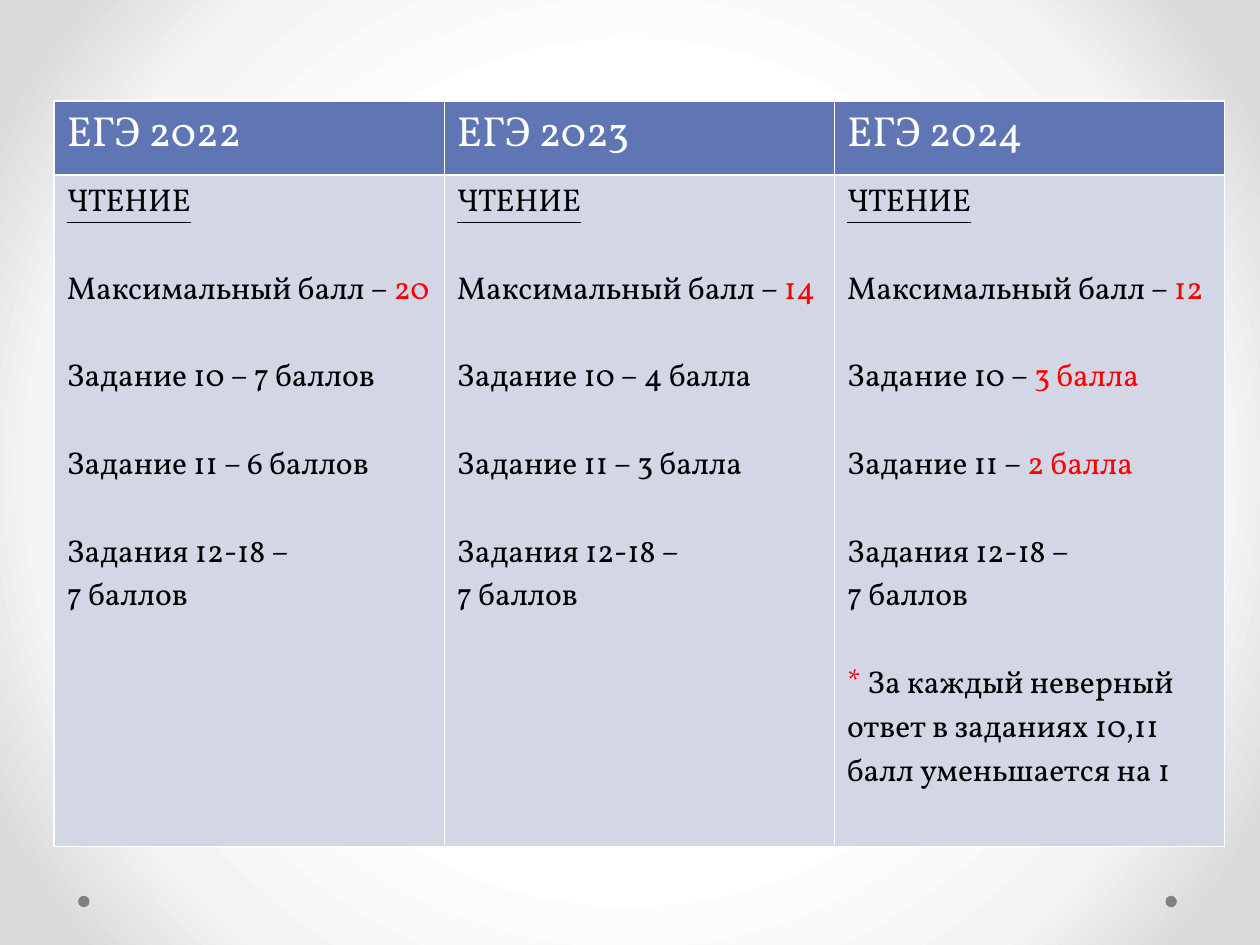
from pptx import Presentation
from pptx.dml.color import RGBColor
from pptx.enum.shapes import MSO_SHAPE
from pptx.oxml import parse_xml
from pptx.oxml.ns import nsdecls, qn
from pptx.util import Inches, Pt

OVAL = MSO_SHAPE.OVAL
WIDE, HIGH = 10, 7.5
HEX = {"white": "FFFFFF", "pale": "F4F4F4", "edge": "DADADA", "dot": "808080",
       "head": "6076B4", "body": "D2D6E5", "black": "000000", "red": "FF0000"}
STOPS = [(50, "white"), (76, "pale"), (92, "edge")]
ROWS = [0.59, 5.33]
GAP = 25
TAIL = "7 баллов"
EXAMS = [
    ("ЕГЭ 2022", "20", "7 баллов", "6 баллов", []),
    ("ЕГЭ 2023", "14", "4 балла", "3 балла", []),
    ("ЕГЭ 2024", "12", "|3 балла", "|2 балла",
     ["|* |За каждый неверный ответ в заданиях 10,11 балл уменьшается на 1"]),
]


def tint(name):
    """Return the named colour."""
    return RGBColor.from_string(HEX[name])


def paint(slide):
    """Fill the background with a round gradient."""
    slide.background.fill.gradient()
    grad = slide.element.find(".//" + qn("a:gradFill"))
    for child in list(grad):
        grad.remove(child)
    stops = "".join(f'<a:gs pos="{pos * 1000}"><a:srgbClr val="{HEX[name]}"/></a:gs>'
                    for pos, name in STOPS)
    grad.append(parse_xml(f'<a:gsLst {nsdecls("a")}>{stops}</a:gsLst>'))
    grad.append(parse_xml(
        f'<a:path {nsdecls("a")} path="circle">'
        '<a:fillToRect l="50000" t="50000" r="50000" b="50000"/></a:path>'))


def add_dot(slide, left):
    """Add a small grey dot near the foot of the slide."""
    dot = slide.shapes.add_shape(OVAL, Inches(left), Inches(7.11),
                                 Inches(0.09), Inches(0.09))
    dot.shadow.inherit = False
    dot.fill.solid()
    dot.fill.fore_color.rgb = tint("dot")
    dot.line.fill.background()


def write(para, text, ink, **form):
    """Write text whose parts, split by bars, switch between ink and red."""
    for turn, part in enumerate(text.split("|")):
        if not part:
            continue
        run = para.add_run()
        run.text = part
        run.font.color.rgb = tint("red" if turn % 2 else ink)
        for key, value in {"name": "Vollkorn", "bold": False, **form}.items():
            setattr(run.font, key, value)


def frame(cell, shade):
    """Fill a cell and give it white borders."""
    cell.fill.solid()
    cell.fill.fore_color.rgb = tint(shade)
    for spot, side in enumerate("LRTB"):
        cell._tc.get_or_add_tcPr().insert(spot, parse_xml(
            f'<a:ln{side} {nsdecls("a")} w="12700"><a:solidFill>'
            f'<a:srgbClr val="{HEX["white"]}"/></a:solidFill></a:ln{side}>'))


def fill_body(cell, total, ten, next_up, notes):
    """Write the reading scores of one exam."""
    frame(cell, "body")
    lines = ["ЧТЕНИЕ", f"Максимальный балл – |{total}", f"Задание 10 – {ten}",
             f"Задание 11 – {next_up}", "Задания 12-18 –", TAIL, *notes]
    for rank, line in enumerate(lines):
        para = cell.text_frame.add_paragraph() if rank else cell.text_frame.paragraphs[0]
        para.space_before = Pt(GAP if rank and line != TAIL else 0)
        write(para, line, "black", size=Pt(18), underline=rank == 0)


def add_grid(slide):
    """Add the table that compares the exams."""
    grid = slide.shapes.add_table(
        len(ROWS), len(EXAMS), Inches(0.43), Inches(0.8),
        Inches(9.29), Inches(sum(ROWS))).table
    grid.horz_banding = False
    for row, high in zip(grid.rows, ROWS):
        row.height = Inches(high)
    for col, (title, *scores) in enumerate(EXAMS):
        head = grid.cell(0, col)
        frame(head, "head")
        write(head.text_frame.paragraphs[0], title, "white", size=Pt(24))
        fill_body(grid.cell(1, col), *scores)


def main():
    """Build and save the slide."""
    deck = Presentation()
    deck.slide_width, deck.slide_height = Inches(WIDE), Inches(HIGH)
    slide = deck.slides.add_slide(deck.slide_layouts[6])
    paint(slide)
    for left in (9.25, 0.62):
        add_dot(slide, left)
    add_grid(slide)
    deck.save("out.pptx")


if __name__ == "__main__":
    main()
